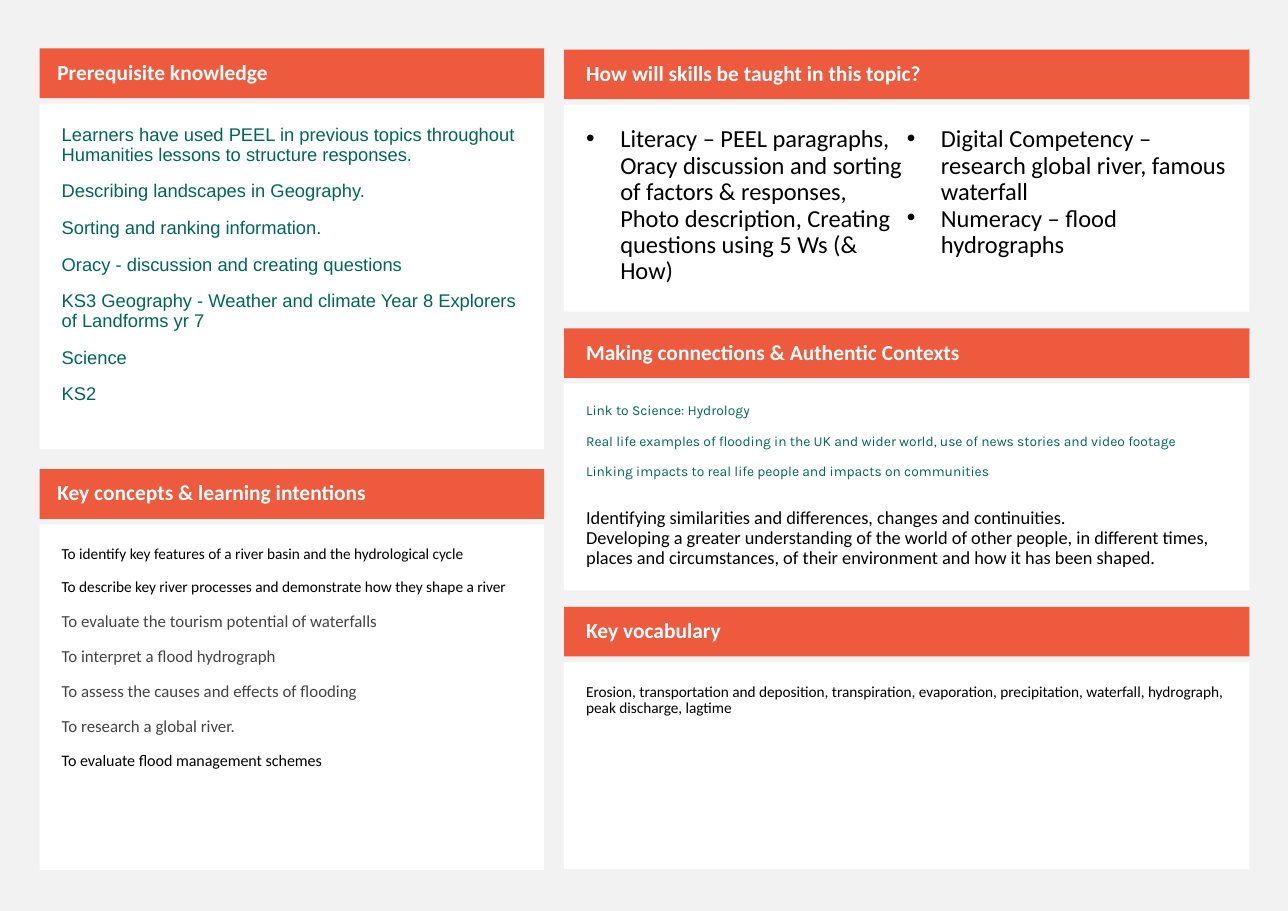
from dataclasses import dataclass

from lxml.etree import SubElement
from pptx import Presentation
from pptx.dml.color import RGBColor
from pptx.enum.shapes import MSO_SHAPE
from pptx.enum.text import MSO_ANCHOR, PP_ALIGN
from pptx.oxml.ns import qn
from pptx.util import Inches, Pt


@dataclass(frozen=True)
class Theme:
    background: str = "F2F2F2"
    panel: str = "FFFFFF"
    heading: str = "ED5A3E"
    heading_text: str = "FFFFFF"
    green: str = "006758"
    grey: str = "444444"
    black: str = "000000"
    font: str = "Calibri"
    heading_size: float = 14
    gap: float = 11


THEME = Theme()


def style(size, color=THEME.black, font=THEME.font, bold=False,
          before=THEME.gap, line=0.9, bullet=False):
    return dict(size=size, color=color, font=font, bold=bold,
                before=before, line=line, bullet=bullet)


STYLES = {
    "heading": style(THEME.heading_size, THEME.heading_text, bold=True),
    "prior": style(12, THEME.green, "Arial"),
    "small": style(10),
    "medium": style(10.5),
    "grey": style(11, THEME.grey),
    "skill": style(16, before=0, bullet=True),
    "link": style(9, THEME.green, "Karla", line=0.8),
    "context_first": style(12, before=19.6),
    "context": style(12, before=0),
}

PREREQUISITES = [
    ("prior", "Learners have used PEEL in previous topics throughout "
              "Humanities lessons to structure responses."),
    ("prior", "Describing landscapes in Geography."),
    ("prior", "Sorting and ranking information."),
    ("prior", "Oracy - discussion and creating questions"),
    ("prior", "KS3 Geography - Weather and climate Year 8 Explorers of Landforms yr 7"),
    ("prior", "Science"),
    ("prior", "KS2"),
]
INTENTIONS = [
    ("small", "To identify key features of a river basin and the hydrological cycle"),
    ("small", "To describe key river processes and demonstrate how they shape a river"),
    ("grey", "To evaluate the tourism potential of waterfalls"),
    ("grey", "To interpret a flood hydrograph"),
    ("grey", "To assess the causes and effects of flooding"),
    ("grey", "To research a global river."),
    ("medium", "To evaluate flood management schemes"),
]
SKILLS = [
    ("skill", "Literacy – PEEL paragraphs, Oracy discussion and sorting of factors & "
              "responses, Photo description, Creating questions using 5 Ws (& How)"),
    ("skill", "Digital Competency – research global river, famous waterfall"),
    ("skill", "Numeracy – flood hydrographs"),
]
CONNECTIONS = [
    ("link", "Link to Science: Hydrology"),
    ("link", "Real life examples of flooding in the UK and wider world, "
             "use of news stories and video footage"),
    ("link", "Linking impacts to real life people and impacts on communities"),
    ("context_first", "Identifying similarities and differences, changes and continuities."),
    ("context", "Developing a greater understanding of the world of other people, "
                "in different times, places and circumstances, of their environment "
                "and how it has been shaped."),
]
VOCABULARY = [
    ("small", "Erosion, transportation and deposition, transpiration, evaporation, "
              "precipitation, waterfall, hydrograph, peak discharge, lagtime"),
]

# Each panel: heading, paragraphs, number of text columns
COLUMNS = [
    dict(left=0.36, top=0.44, width=4.58, step=3.82, body=3.14, inset=0.16, panels=[
        ("Prerequisite knowledge", PREREQUISITES, 1),
        ("Key concepts & learning intentions", INTENTIONS, 1),
    ]),
    dict(left=5.12, top=0.45, width=6.22, step=2.53, body=1.88, inset=0.2, panels=[
        ("How will skills be taught in this topic?", SKILLS, 2),
        ("Making connections & Authentic Contexts", CONNECTIONS, 1),
        ("Key vocabulary", VOCABULARY, 1),
    ]),
]
HEADING_HEIGHT = 0.45
BODY_OFFSET = 0.5
HANGING = Inches(0.31)


def add_bullet(para):
    properties = para._p.get_or_add_pPr()
    properties.set("marL", str(HANGING))
    properties.set("indent", str(-HANGING))
    SubElement(properties, qn("a:buFont"), typeface="Arial")
    SubElement(properties, qn("a:buChar"), char="•")


def write_paragraph(para, text, look):
    formats = dict(alignment=PP_ALIGN.LEFT, line_spacing=look["line"],
                   space_before=Pt(look["before"]), space_after=Pt(0))
    for name, value in formats.items():
        setattr(para, name, value)
    if look["bullet"]:
        add_bullet(para)
    span = para.add_run()
    span.text = text
    for name, value in dict(name=look["font"], size=Pt(look["size"]), bold=look["bold"]).items():
        setattr(span.font, name, value)
    span.font.color.rgb = RGBColor.from_string(look["color"])


def add_box(page, place, fill, paragraphs, insets, anchor, columns=1):
    """Draw a filled box; insets run left, top, right, bottom in inches."""
    box = page.shapes.add_shape(MSO_SHAPE.RECTANGLE, *map(Inches, place))
    box.shadow.inherit = False
    box.fill.solid()
    box.fill.fore_color.rgb = RGBColor.from_string(fill)
    box.line.fill.background()
    frame = box.text_frame
    frame.word_wrap = True
    frame.vertical_anchor = anchor
    for side, inset in zip(("left", "top", "right", "bottom"), insets):
        setattr(frame, f"margin_{side}", Inches(inset))
    if columns > 1:
        frame._txBody.bodyPr.set("numCol", str(columns))
    for index, (look, text) in enumerate(paragraphs):
        para = frame.add_paragraph() if index else frame.paragraphs[0]
        write_paragraph(para, text, STYLES[look])


def add_column(page, column):
    left, width, inset = column["left"], column["width"], column["inset"]
    for index, (heading, paragraphs, text_columns) in enumerate(column["panels"]):
        top = column["top"] + index * column["step"]
        add_box(page, (left, top + BODY_OFFSET, width, column["body"]), THEME.panel,
                paragraphs, [0.2] * 4, MSO_ANCHOR.TOP, text_columns)
        add_box(page, (left, top, width, HEADING_HEIGHT), THEME.heading,
                [("heading", heading)], (inset, 0.05, 0.1, 0.05), MSO_ANCHOR.MIDDLE)


def main():
    deck = Presentation()
    deck.slide_width, deck.slide_height = Inches(11.69), Inches(8.27)
    page = deck.slides.add_slide(deck.slide_layouts[6])
    page.background.fill.solid()
    page.background.fill.fore_color.rgb = RGBColor.from_string(THEME.background)
    for column in COLUMNS:
        add_column(page, column)
    deck.save("out.pptx")


if __name__ == "__main__":
    main()
